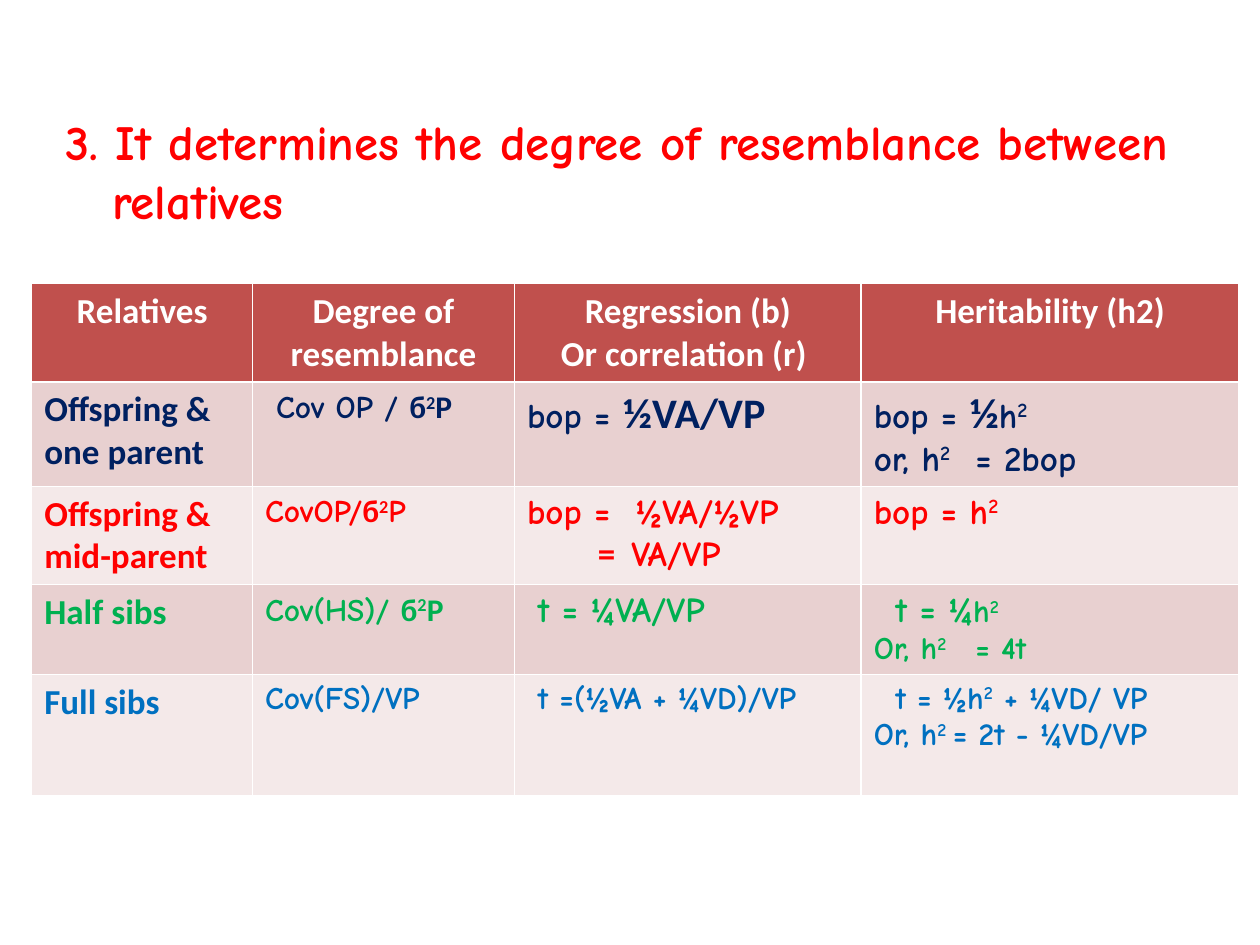
"""Build a slide on the degree of resemblance between relatives."""
from lxml.etree import SubElement as Sub
from pptx import Presentation
from pptx.dml.color import RGBColor as Rgb
from pptx.enum.text import PP_ALIGN as Align
from pptx.oxml.ns import qn
from pptx.util import Cm, Pt

HUES = {
    "white": "FFFFFF", "head": "C0504D", "dark": "E8D0D0", "light": "F4E9E9",
    "red": "FF0000", "navy": "002060", "green": "00B050", "blue": "0070C0",
}
SANS, HAND = "Calibri", "Comic Neue"
S18, S20, S24 = (SANS, 18), (SANS, 20), (SANS, 24)
H18, H20 = (HAND, 18), (HAND, 20)
UP = 30000

WIDTHS = [4.45, 5.28, 6.99, 7.62]
HEIGHTS = [1.98, 2.1, 1.98, 1.81, 2.44]
HEADS = [
    ["Relatives"],
    ["Degree of resemblance"],
    ["Regression (b)", "Or correlation (r) "],
    ["Heritability (h2)"],
]
ROWS = [
    ("navy", [
        [(0, [("Offspring & one parent", S20)])],
        [(0.22, [("Cov OP / ", H18), ("б", S18), ("2", S18, UP), ("P", S18)])],
        [(0, [("bop = ", H20), ("½VA/VP", S24)])],
        [(0, [("bop = ", H20), ("½", S24), ("h", H20), ("2", H20, UP)]),
         (0, [("or, h", H20), ("2", H20, UP), ("  = 2bop", H20)])],
    ]),
    ("red", [
        [(0, [("Offspring & mid-parent", S20)])],
        [(0, [("CovOP/", H18), ("б", S18), ("2", S18, UP), ("P", H18)])],
        [(0, [("bop =  ½VA/½VP", H20)]),
         (1.43, [("=  ", S20), ("VA/VP", H20)])],
        [(0, [("bop = h", H20), ("2", H20, UP)])],
    ]),
    ("green", [
        [(0, [("Half sibs", S20)])],
        [(0, [("Cov(HS)/ ", H18), ("б", S18), ("2", S18, UP), ("P", S18)])],
        [(0.22, [("t = ¼VA/VP", H20)])],
        [(0.44, [("t = ¼", H20), ("h", H18), ("2", H18, UP)]),
         (0, [("Or, h", H18), ("2 ", H18, UP), ("  = 4t", H18)])],
    ]),
    ("blue", [
        [(0, [("Full sibs", S20)])],
        [(0, [("Cov(FS)/VP", H18)])],
        [(0.22, [("t =(½VA + ¼VD)/VP", H18)])],
        [(0.44, [("t = ½h", H18), ("2", H18, UP), (" + ¼VD/ VP", H18)]),
         (0, [("Or, h", H18), ("2 ", H18, UP), ("= 2t - ¼VD/VP", H18)])],
    ]),
]


def style(item, form):
    """Set attributes from a dict."""
    for key, value in form.items():
        setattr(item, key, value)


def add_run(para, text, face, hue, base=0):
    """Add a bold run, raised when base is set."""
    run = para.add_run()
    run.text = text
    style(run.font, {"name": face[0], "size": Pt(face[1]), "bold": True})
    run.font.color.rgb = Rgb.from_string(HUES[hue])
    if base:
        run.font._element.set("baseline", str(base))


def indent(para, left, first=0):
    """Set the left margin and first-line indent."""
    props = para._p.get_or_add_pPr()
    props.set("marL", str(Cm(left)))
    props.set("indent", str(Cm(first)))
    return props


def add_edges(cell):
    """Draw thin white lines round a cell."""
    props = cell._tc.get_or_add_tcPr()
    for spot, side in enumerate(("lnL", "lnR", "lnT", "lnB")):
        line = props.makeelement(qn("a:" + side), {"w": str(Pt(1))})
        fill = Sub(line, qn("a:solidFill"))
        Sub(fill, qn("a:srgbClr"), val=HUES["white"])
        props.insert(spot, line)


def fill_cell(cell, paras, hue, back, align=Align.LEFT):
    """Fill a cell with paragraphs of runs."""
    cell.fill.solid()
    cell.fill.fore_color.rgb = Rgb.from_string(HUES[back])
    add_edges(cell)
    frame = cell.text_frame
    for num, (left, runs) in enumerate(paras):
        para = frame.add_paragraph() if num else frame.paragraphs[0]
        para.alignment = align
        indent(para, left)
        for text, face, *base in runs:
            add_run(para, text, face, hue, *base)


def add_point(slide):
    """Write the point in the body placeholder."""
    slide.shapes.title._element.getparent().remove(slide.shapes.title._element)
    body = slide.placeholders[1]
    style(body, {"left": Cm(1.06), "top": Cm(2.12),
                 "width": Cm(22.86), "height": Cm(3.4)})
    para = body.text_frame.paragraphs[0]
    Sub(indent(para, 0.95, -0.95), qn("a:buNone"))
    para.space_before = Pt(0)
    text = "3. It determines the degree of resemblance between relatives"
    add_run(para, text, (HAND, 28), "red")


def add_grid(slide):
    """Add the table of relatives."""
    grid = slide.shapes.add_table(
        len(HEIGHTS), len(WIDTHS), Cm(0.64), Cm(5.72),
        Cm(sum(WIDTHS)), Cm(sum(HEIGHTS))).table
    for col, width in zip(grid.columns, WIDTHS):
        col.width = Cm(width)
    for row, height in zip(grid.rows, HEIGHTS):
        row.height = Cm(height)
    for col, lines in enumerate(HEADS):
        paras = [(0, [(line, S20)]) for line in lines]
        fill_cell(grid.cell(0, col), paras, "white", "head", Align.CENTER)
    for row, (hue, cells) in enumerate(ROWS, 1):
        back = "dark" if row % 2 else "light"
        for col, paras in enumerate(cells):
            fill_cell(grid.cell(row, col), paras, hue, back)


def main():
    """Build and save the slide."""
    deck = Presentation()
    style(deck, {"slide_width": Cm(25.4), "slide_height": Cm(19.05)})
    slide = deck.slides.add_slide(deck.slide_layouts[1])
    add_point(slide)
    add_grid(slide)
    deck.save("out.pptx")


if __name__ == "__main__":
    main()
